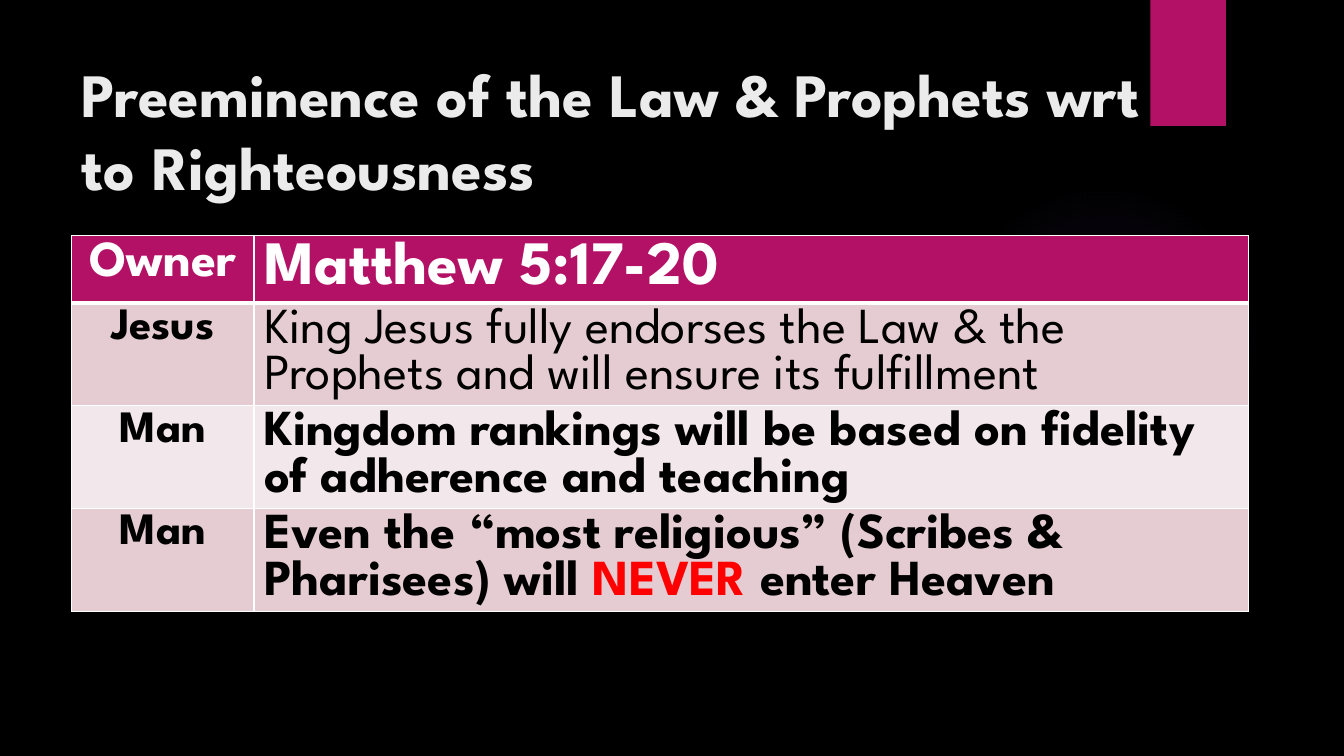
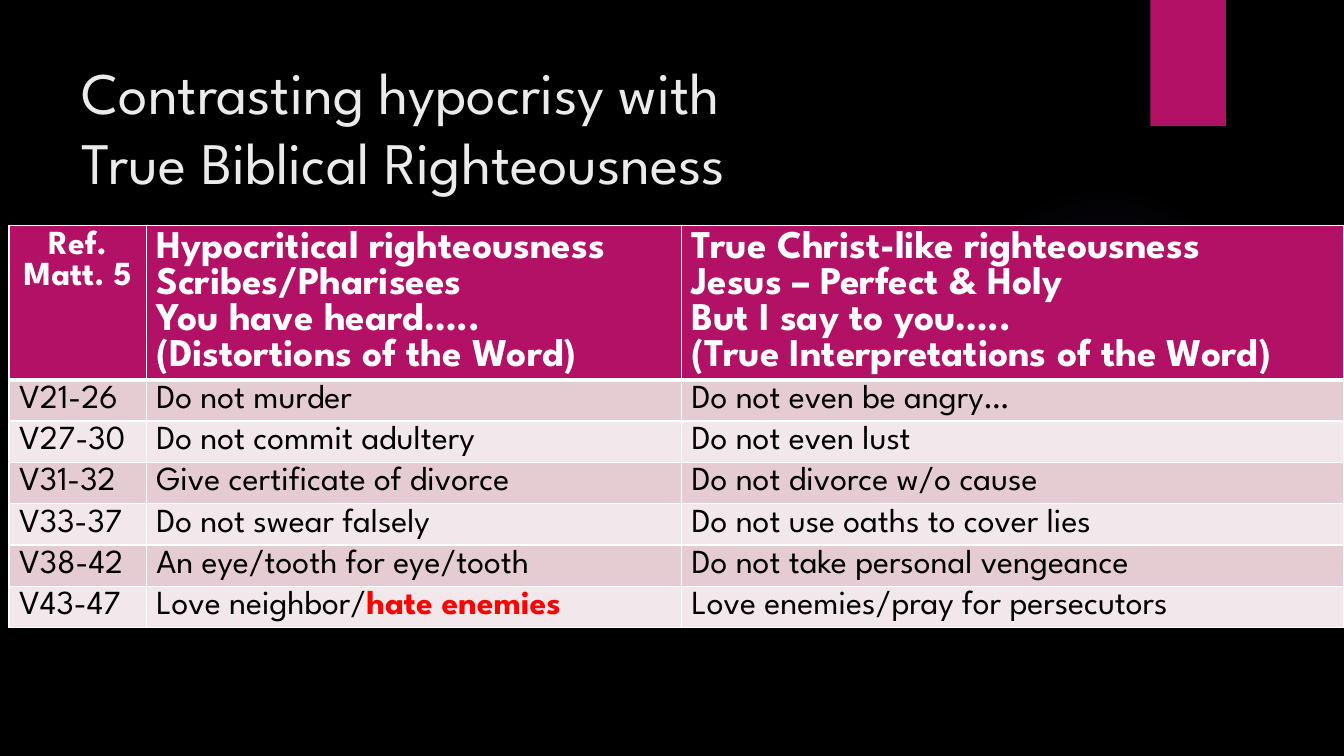
import pptx
import pptx.util
import pptx.dml.color
import pptx.enum.shapes
import pptx.enum.text
import pptx.oxml
import pptx.oxml.ns

Inch = pptx.util.Inches
Pt = pptx.util.Pt

THEME = {
    "font": "League Spartan",
    "back": "000000", "title": "EBEBEB", "pink": "B31166", "glow": "9B6BF2",
    "head": "FFFFFF", "body": "000000", "red": "FF0000", "line": "FFFFFF",
    "bands": ("E5CCD3", "F2E7EA"),
    "thin": 1, "thick": 3, "lead": 1.0,
}
WIDE, HIGH = 13.33, 7.5
GLOW = (9.41, 1.83, 3.08, 3.08)
TAB = (11.41, 0, 0.75, 1.25)
FADE = ((0, 7), (36, 6), (69, 0), (100, 0))
MARK = "*"

SLIDES = [
    {
        "title": "Preeminence of the Law & Prophets wrt to Righteousness",
        "size": 44, "bold": True, "width": 10.85,
        "at": (0.71, 2.34), "cols": (1.81, 9.86), "rows": (0.65, 1.02),
        "heads": (36, 44), "sizes": (32, 36),
        "mid": {(0, 0), (1, 0), (2, 0), (3, 0)},
        "strong": {(1, 0), (2, 0), (2, 1), (3, 0), (3, 1)},
        "cells": [
            ("Owner", "Matthew 5:17-20"),
            ("Jesus", "King Jesus fully endorses the Law & the Prophets and will ensure its fulfillment"),
            ("Man", "Kingdom rankings will be based on fidelity of adherence and teaching"),
            ("Man", "Even the “most religious” (Scribes & Pharisees) will *NEVER *enter Heaven"),
        ],
    },
    {
        "title": "Contrasting hypocrisy with\vTrue Biblical Righteousness",
        "size": 42, "bold": False, "width": 10.29,
        "at": (0.09, 2.24), "cols": (1.36, 5.31, 6.57), "rows": (1.5, 0.41),
        "heads": (24, 28, 28), "sizes": (24, 24, 24),
        "mid": {(0, 0)}, "strong": set(),
        "cells": [
            ("Ref.\nMatt. 5",
             "Hypocritical righteousness\nScribes/Pharisees\nYou have heard…..\n(Distortions of the Word)",
             "True Christ-like righteousness\nJesus – Perfect & Holy\nBut I say to you…..\n(True Interpretations of the Word)"),
            ("V21-26", "Do not murder", "Do not even be angry…"),
            ("V27-30", "Do not commit adultery", "Do not even lust"),
            ("V31-32", "Give certificate of divorce", "Do not divorce w/o cause"),
            ("V33-37", "Do not swear falsely", "Do not use oaths to cover lies"),
            ("V38-42", "An eye/tooth for eye/tooth", "Do not take personal vengeance"),
            ("V43-47", "Love neighbor/*hate enemies*", "Love enemies/pray for persecutors"),
        ],
    },
]


def tint(name):
    return pptx.dml.color.RGBColor.from_string(name)


def paint(fill, name):
    fill.solid()
    fill.fore_color.rgb = tint(name)


def style(font, size, color, bold):
    font.name = THEME["font"]
    font.size = Pt(size)
    font.bold = bold
    font.color.rgb = tint(color)


def add_form(slide, kind, box, color):
    form = slide.shapes.add_shape(kind, *map(Inch, box))
    form.shadow.inherit = False
    form.line.fill.background()
    paint(form.fill, color)
    return form


def add_decor(slide):
    kinds = pptx.enum.shapes.MSO_SHAPE
    glow = add_form(slide, kinds.OVAL, GLOW, THEME["glow"])
    stops = "".join(
        f'<a:gs pos="{spot * 1000}"><a:srgbClr val="{THEME["glow"]}">'
        f'<a:alpha val="{alpha * 1000}"/></a:srgbClr></a:gs>'
        for spot, alpha in FADE)
    fade = pptx.oxml.parse_xml(
        f'<a:gradFill {pptx.oxml.ns.nsdecls("a")}><a:gsLst>{stops}</a:gsLst>'
        '<a:path path="circle"><a:fillToRect l="50000" t="50000" r="50000" b="50000"/>'
        '</a:path></a:gradFill>')
    solid = glow._element.spPr.find(pptx.oxml.ns.qn("a:solidFill"))
    solid.getparent().replace(solid, fade)
    add_form(slide, kinds.RECTANGLE, TAB, THEME["pink"])


def set_title(slide, data):
    title = slide.shapes.title
    title.left, title.top, title.width, title.height = map(
        Inch, (0.71, 0.5, data["width"], 1.53))
    frame = title.text_frame
    frame.text = data["title"]
    frame.word_wrap = True
    frame.auto_size = pptx.enum.text.MSO_AUTO_SIZE.NONE
    frame.vertical_anchor = pptx.enum.text.MSO_ANCHOR.TOP
    para = frame.paragraphs[0]
    para.alignment = pptx.enum.text.PP_ALIGN.LEFT
    para.line_spacing = THEME["lead"]
    for run in para.runs:
        style(run.font, data["size"], THEME["title"], data["bold"])


def set_edges(cell, row):
    thick = {0: "B", 1: "T"}.get(row)
    props = cell._tc.get_or_add_tcPr()
    for side in "LRTB":
        width = THEME["thick" if side == thick else "thin"]
        props.append(pptx.oxml.parse_xml(
            f'<a:ln{side} {pptx.oxml.ns.nsdecls("a")} w="{Pt(width)}"><a:solidFill>'
            f'<a:srgbClr val="{THEME["line"]}"/></a:solidFill></a:ln{side}>'))


def set_cell(cell, data, row, col):
    head = row == 0
    size = data["heads" if head else "sizes"][col]
    color = THEME["head" if head else "body"]
    bold = head or (row, col) in data["strong"]
    set_edges(cell, row)
    paint(cell.fill, THEME["pink"] if head else THEME["bands"][(row - 1) % 2])
    text = data["cells"][row][col]
    frame = cell.text_frame
    frame.text = text.replace(MARK, "")
    for para, line in zip(frame.paragraphs, text.split("\n")):
        if (row, col) in data["mid"]:
            para.alignment = pptx.enum.text.PP_ALIGN.CENTER
        parts = line.split(MARK)
        para.runs[0].text = parts[0]
        for part in filter(None, parts[1:]):
            para.add_run().text = part
        for order, run in enumerate(para.runs):
            red = order % 2 == 1
            style(run.font, size, THEME["red"] if red else color, red or bold)


def add_grid(slide, data):
    cells, cols = data["cells"], data["cols"]
    first, rest = data["rows"]
    tall = [first] + [rest] * (len(cells) - 1)
    box = (*data["at"], sum(cols), sum(tall))
    grid = slide.shapes.add_table(len(cells), len(cols), *map(Inch, box)).table
    for col, width in zip(grid.columns, cols):
        col.width = Inch(width)
    for row, height in enumerate(tall):
        grid.rows[row].height = Inch(height)
        for col in range(len(cols)):
            set_cell(grid.cell(row, col), data, row, col)


def main():
    deck = pptx.Presentation()
    deck.slide_width, deck.slide_height = Inch(WIDE), Inch(HIGH)
    paint(deck.slide_master.background.fill, THEME["back"])
    for data in SLIDES:
        slide = deck.slides.add_slide(deck.slide_layouts.get_by_name("Title Only"))
        add_decor(slide)
        set_title(slide, data)
        add_grid(slide, data)
    deck.save("out.pptx")


if __name__ == "__main__":
    main()
